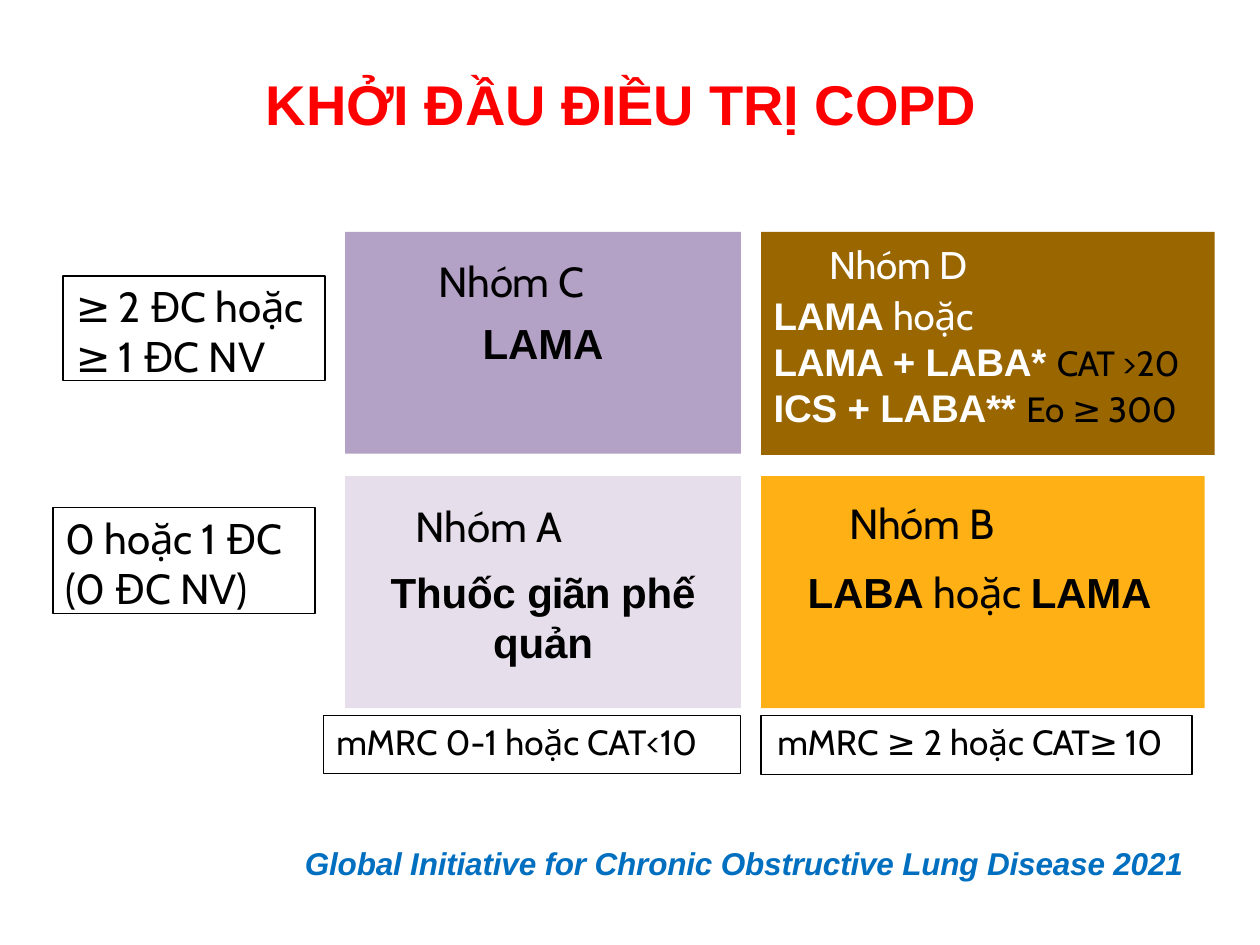
from typing import NamedTuple
from pptx import Presentation
from pptx.dml.color import RGBColor
from pptx.enum import shapes, text
from pptx.util import Inches, Pt

BLACK, WHITE = "000000", "FFFFFF"


class Run(NamedTuple):
    words: str
    bold: bool = False
    size: float = 0  # 0 takes the size of the box
    color: str = ""  # empty takes the colour of the box
    gap: float = -0.1


class Para(NamedTuple):
    runs: list[Run]
    indent: float = 0.1
    before: float = 0
    center: bool = False
    pitch: float = 0


class Box(NamedTuple):
    left: float
    top: float
    width: float
    height: float
    inset: float
    size: float
    paras: list[Para]
    fill: str = ""
    color: str = BLACK


def paint(value: str) -> RGBColor:
    return RGBColor.from_string(value)


def write(frame, paras: list[Para], *, size: float, color: str = BLACK,
          inset: float = 0.04, italic: bool = False) -> None:
    frame.word_wrap = True
    frame.auto_size = text.MSO_AUTO_SIZE.NONE
    frame.vertical_anchor = text.MSO_ANCHOR.TOP
    frame.margin_left = frame.margin_right = frame.margin_bottom = 0
    frame.margin_top = Inches(inset)
    for i, para in enumerate(paras):
        line = frame.add_paragraph() if i else frame.paragraphs[0]
        line.alignment = text.PP_ALIGN.CENTER if para.center else text.PP_ALIGN.LEFT
        line.space_before = Pt(para.before)
        if para.pitch:
            line.line_spacing = Pt(para.pitch)
        if not para.center:
            props = line._p.get_or_add_pPr()
            props.set("marL", str(Inches(para.indent)))
            props.set("indent", "0")
        for part in para.runs:
            run = line.add_run()
            run.text = part.words
            font = run.font
            font.name = "Arial" if part.bold else "Cabin"
            font.size = Pt(part.size or size)
            font.bold, font.italic = part.bold, italic
            font.color.rgb = paint(part.color or color)
            font._element.set("spc", str(round(part.gap * 100)))


def draw(slide, box: Box) -> None:
    """Add a filled panel, or an outlined label when there is no fill."""
    shape = slide.shapes.add_shape(
        shapes.MSO_SHAPE.RECTANGLE,
        *map(Inches, (box.left, box.top, box.width, box.height)))
    shape.shadow.inherit = False
    if box.fill:
        shape.fill.solid()
        shape.fill.fore_color.rgb = paint(box.fill)
        shape.line.fill.background()
    else:
        shape.fill.background()
        shape.line.color.rgb = paint(BLACK)
        shape.line.width = Pt(0.72)
    write(shape.text_frame, box.paras, size=box.size, color=box.color, inset=box.inset)


def banner(slide, place: tuple, words: str, **style) -> None:
    frame = slide.shapes.add_textbox(*map(Inches, place)).text_frame
    write(frame, [Para([Run(words, True)], 0.01, 1)], inset=0.01, **style)


COL1, COL2 = 2.74, 6.04
ROW1, ROW2, ROW3 = 1.84, 3.78, 5.68

GROUPS = [
    Box(COL1, ROW1, 3.14, 1.76, 0.19, 24, [
        Para([Run("Nhóm C")], 0.74, 13.3),
        Para([Run("LAMA", True)], before=6.3, center=True)], "B3A1C6"),
    Box(COL1, ROW2, 3.14, 1.84, 0.19, 24, [
        Para([Run("Nhóm A")], 0.56, 13.4),
        Para([Run("Thuốc ", True), Run("giãn ", True, gap=-0.6), Run("phế", True)],
             before=8.9, center=True),
        Para([Run("quản", True)], center=True)], "E6DFEB"),
    Box(COL2, ROW1, 3.6, 1.77, 0.07, 22, [
        Para([Run("Nhóm D")], 0.54, 5.2),
        Para([Run("LAMA ", True), Run("hoặc")], before=2.7),
        Para([Run("LAMA + LABA* ", True), Run("CAT ", size=20, color=BLACK, gap=-0.5),
              Run(">20", size=20, color=BLACK, gap=0)]),
        Para([Run("ICS + LABA** ", True), Run("Eo ", size=20, color=BLACK),
              Run("≥ ", size=20, color=BLACK, gap=-0.7),
              Run("300", size=20, color=BLACK)])], "996600", WHITE),
    Box(COL2, ROW2, 3.52, 1.84, 0.17, 24, [
        Para([Run("Nhóm B")], 0.7, 11.9),
        Para([Run("LABA ", True), Run("hoặc "), Run("LAMA", True)], 0.37, 10.4)],
        "FFB015"),
]

LABELS = [
    Box(0.5, 2.19, 2.08, 0.83, 0.04, 24, [
        Para([Run("≥ ", gap=-0.8), Run("2 ", gap=0), Run("ĐC hoặc")], before=3),
        Para([Run("≥ ", gap=-0.8), Run("1 ", gap=0), Run("ĐC NV")], pitch=28.2)]),
    Box(0.42, 4.03, 2.08, 0.84, 0.04, 24, [
        Para([Run("0 hoặc "), Run("1 ", gap=0), Run("ĐC")], before=3.1),
        Para([Run("(0 ", gap=0), Run("ĐC NV)")], pitch=28.4)]),
    Box(2.57, ROW3, 3.31, 0.46, 0.04, 20, [
        Para([Run("mMRC 0-1 hoặc ", gap=0), Run("CAT<10", gap=-0.2)], before=3)]),
    Box(COL2, ROW3, 3.42, 0.47, 0.04, 20, [
        Para([Run("mMRC ", gap=0), Run("≥", gap=-0.7), Run(" 2 hoặc ", gap=0),
              Run("CAT≥ ", gap=-0.6), Run("10")], 0.13, 3.1)]),
]


def main() -> None:
    deck = Presentation()
    deck.slide_width, deck.slide_height = Inches(10), Inches(7.5)
    slide = deck.slides.add_slide(deck.slide_layouts[6])
    for box in GROUPS + LABELS:
        draw(slide, box)
    banner(slide, (2.1, 0.54, 5.69, 0.56), "KHỞI ĐẦU ĐIỀU TRỊ COPD",
           size=32, color="FF0000")
    banner(slide, (2.41, 6.69, 7.08, 0.33),
           "Global Initiative for Chronic Obstructive Lung Disease 2021",
           size=18, color="006FC0", italic=True)
    deck.save("out.pptx")


if __name__ == "__main__":
    main()
